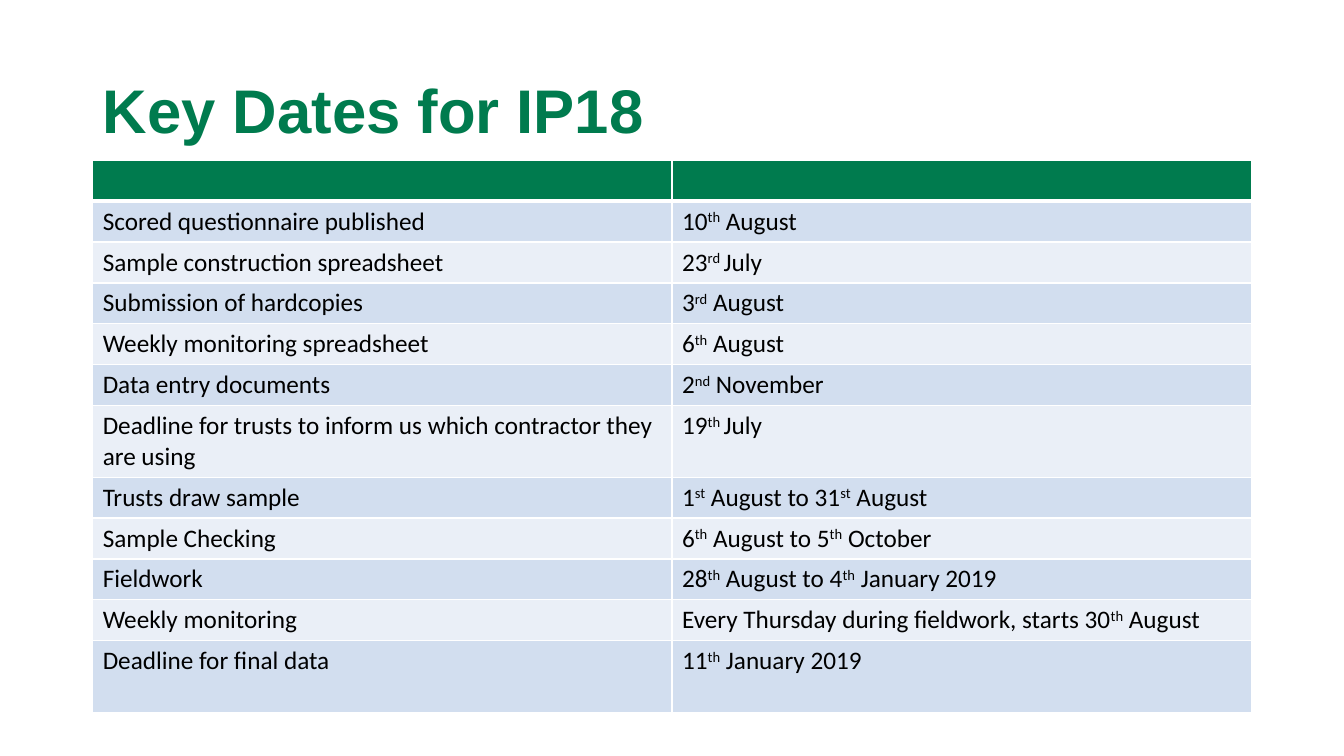
from lxml import etree
from pptx import Presentation
from pptx.dml.color import RGBColor
from pptx.enum.text import MSO_ANCHOR, PP_ALIGN
from pptx.oxml.ns import qn
from pptx.util import Inches, Pt

LEFT, MIDDLE = PP_ALIGN.LEFT, MSO_ANCHOR.MIDDLE
GREEN = RGBColor(0x00, 0x7B, 0x4E)
BLACK = RGBColor(0x00, 0x00, 0x00)
WHITE = RGBColor(0xFF, 0xFF, 0xFF)
BANDS = [RGBColor(0xD2, 0xDE, 0xEF), RGBColor(0xEA, 0xEF, 0xF7)]

COLUMNS, ROWS = 58, 75
LINE_ROWS, TALL_ROWS = 4.05, 7.1

# Text between carets is superscript.
KEY_DATES = [
    ("Scored questionnaire published", "10^th^ August"),
    ("Sample construction spreadsheet", "23^rd ^July"),
    ("Submission of hardcopies", "3^rd^ August"),
    ("Weekly monitoring spreadsheet", "6^th^ August"),
    ("Data entry documents", "2^nd^ November"),
    ("Deadline for trusts to inform us which contractor they are using",
     "19^th ^July"),
    ("Trusts draw sample", "1^st^ August to 31^st^ August"),
    ("Sample Checking", "6^th^ August to 5^th^ October"),
    ("Fieldwork", "28^th^ August to 4^th^ January 2019"),
    ("Weekly monitoring",
     "Every Thursday during fieldwork, starts 30^th^ August"),
    ("Deadline for final data", "11^th^ January 2019"),
]
TALL_LABELS = {KEY_DATES[5][0], KEY_DATES[-1][0]}


def write(tf, text, *, size=18, font="Calibri", color=BLACK, bold=False,
          spacing=1.0):
    """Fill the first paragraph, raising the parts between carets."""
    p = tf.paragraphs[0]
    p.alignment = LEFT
    p.line_spacing = spacing
    for i, part in enumerate(text.split("^")):
        r = p.add_run()
        r.text = part
        r.font.size = Pt(size)
        r.font.name = font
        r.font.bold = bold
        r.font.color.rgb = color
        if i % 2:
            r.font._element.set("baseline", "30000")


def set_borders(cell, **widths):
    """Draw white borders; widths are points keyed by side L, R, T, B."""
    tcPr = cell._tc.get_or_add_tcPr()
    for i, (side, width) in enumerate(widths.items()):
        ln = etree.Element(qn(f"a:ln{side}"), w=str(Pt(width)))
        fill = etree.SubElement(ln, qn("a:solidFill"))
        etree.SubElement(fill, qn("a:srgbClr"), val=str(WHITE))
        tcPr.insert(i, ln)


class Deck:
    def __init__(self):
        self.prs = Presentation()
        self.prs.slide_width = Inches(13.33)
        self.prs.slide_height = Inches(7.5)
        self.s = self.prs.slides.add_slide(self.prs.slide_layouts[5])

    def x(self, columns):
        return round(self.prs.slide_width * columns / COLUMNS)

    def y(self, rows):
        return round(self.prs.slide_height * rows / ROWS)

    def title(self, text, left, top, width, height):
        sp = self.s.shapes.title
        sp.left, sp.top = self.x(left), self.y(top)
        sp.width, sp.height = self.x(width), self.y(height)
        sp.text_frame.vertical_anchor = MIDDLE
        write(sp.text_frame, text, size=44, font="Arial", color=GREEN,
              bold=True, spacing=0.9)

    def table(self, entries, left, top, width):
        """Add a banded table below an empty green header row."""
        heights = [LINE_ROWS] + [
            TALL_ROWS if label in TALL_LABELS else LINE_ROWS
            for label, _ in entries]
        table = self.s.shapes.add_table(
            len(heights), 2, self.x(left), self.y(top),
            self.x(width), self.y(sum(heights))).table
        for row, height in zip(table.rows, heights):
            row.height = self.y(height)
        for i, texts in enumerate([("", ""), *entries]):
            for j, text in enumerate(texts):
                cell = table.cell(i, j)
                cell.fill.solid()
                cell.fill.fore_color.rgb = BANDS[(i - 1) % 2] if i else GREEN
                set_borders(cell, L=1, R=1, T=3 if i == 1 else 1,
                            B=1 if i else 3)
                if text:
                    write(cell.text_frame, text)


def main():
    deck = Deck()
    deck.title("Key Dates for IP18", 4, 4, 50, 14.5)
    deck.table(KEY_DATES, 4, 15.9, 50)
    deck.prs.save("out.pptx")


if __name__ == "__main__":
    main()
